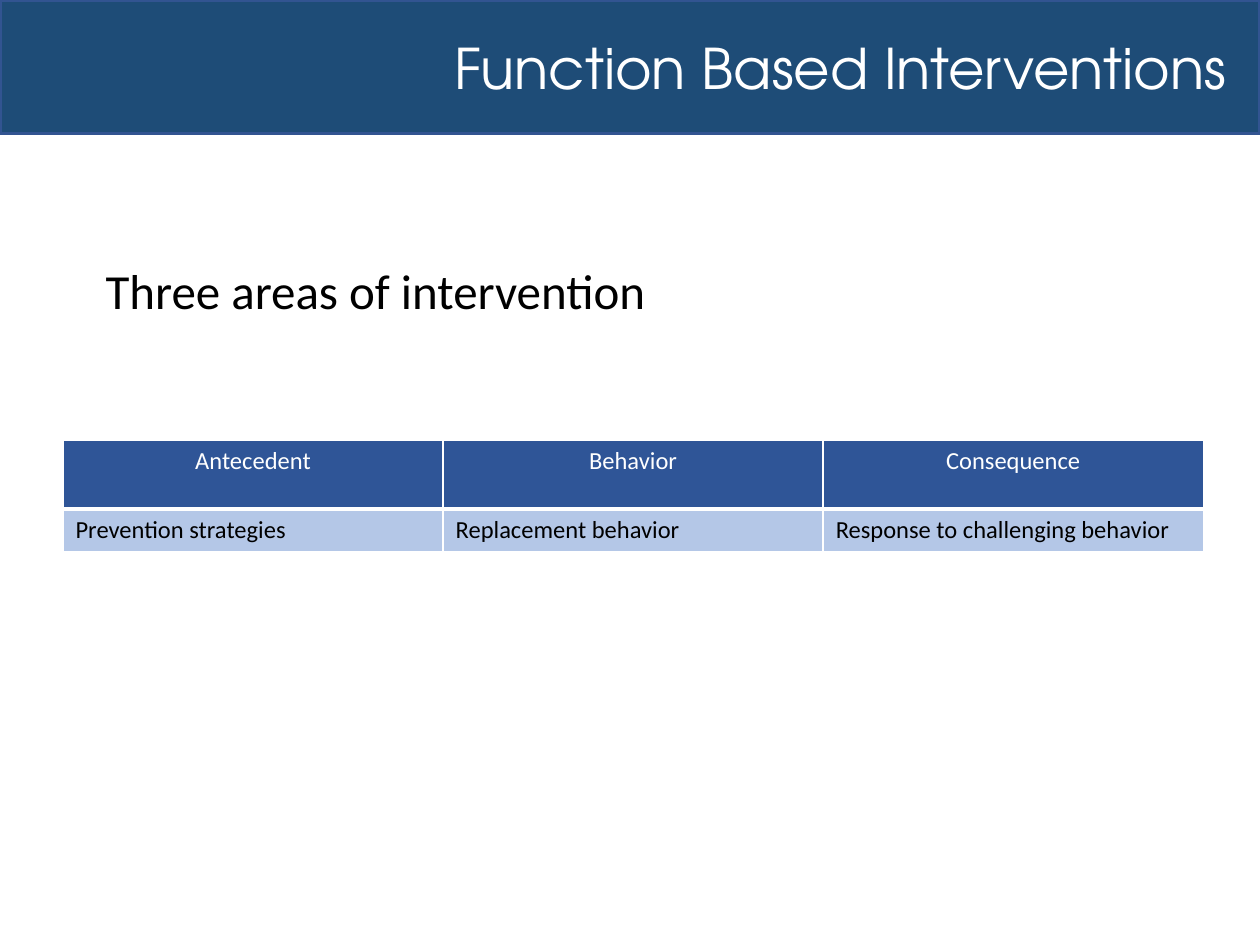
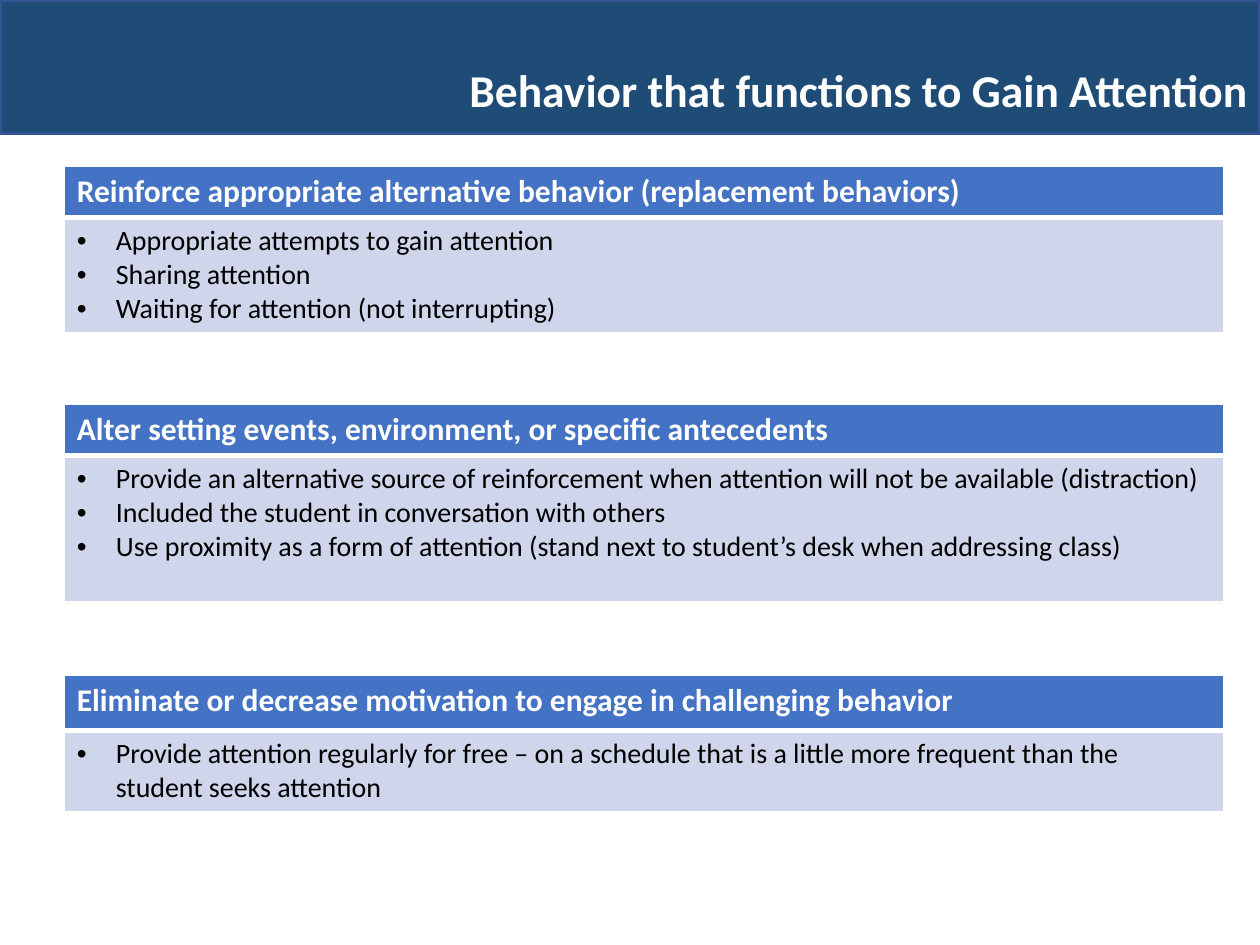
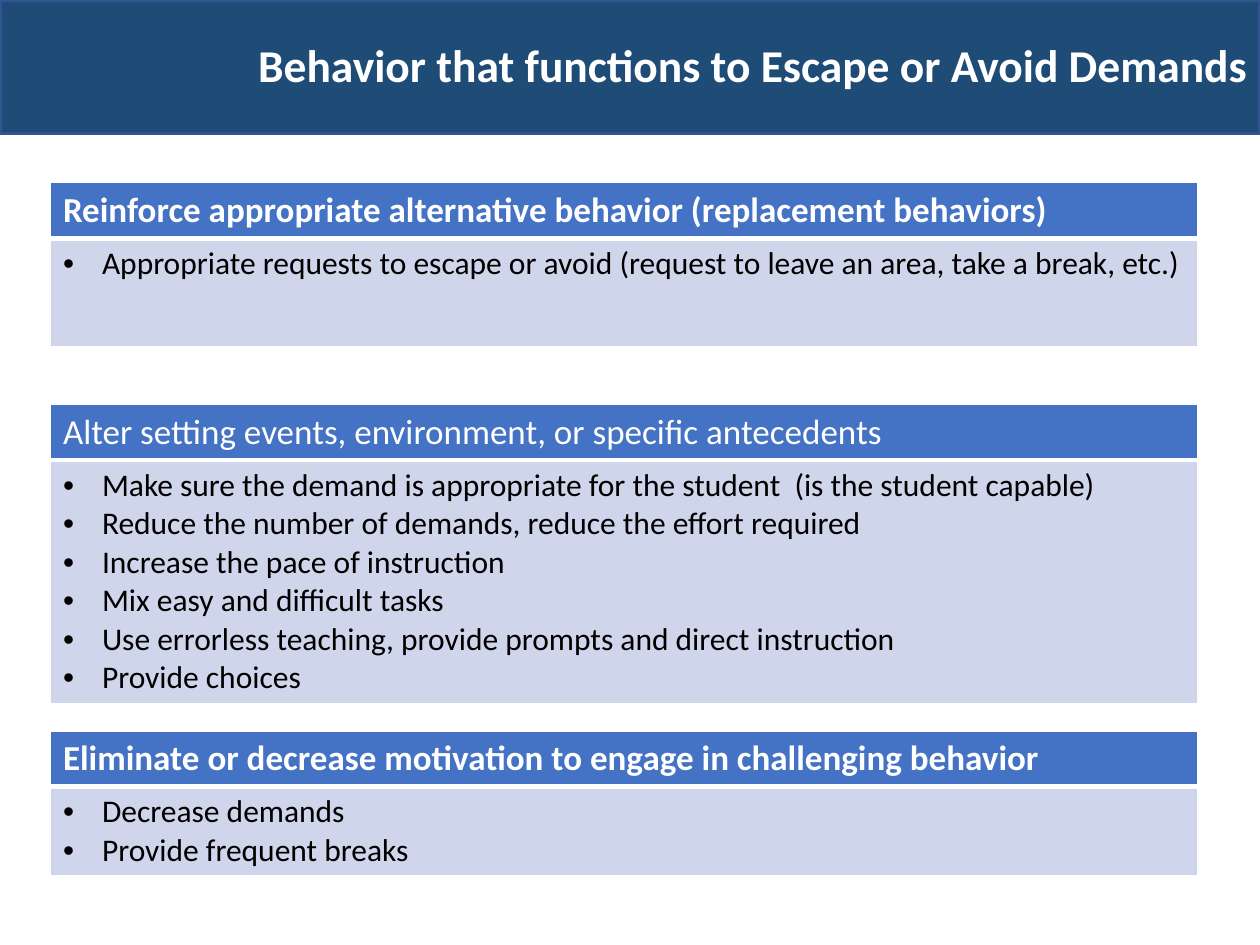
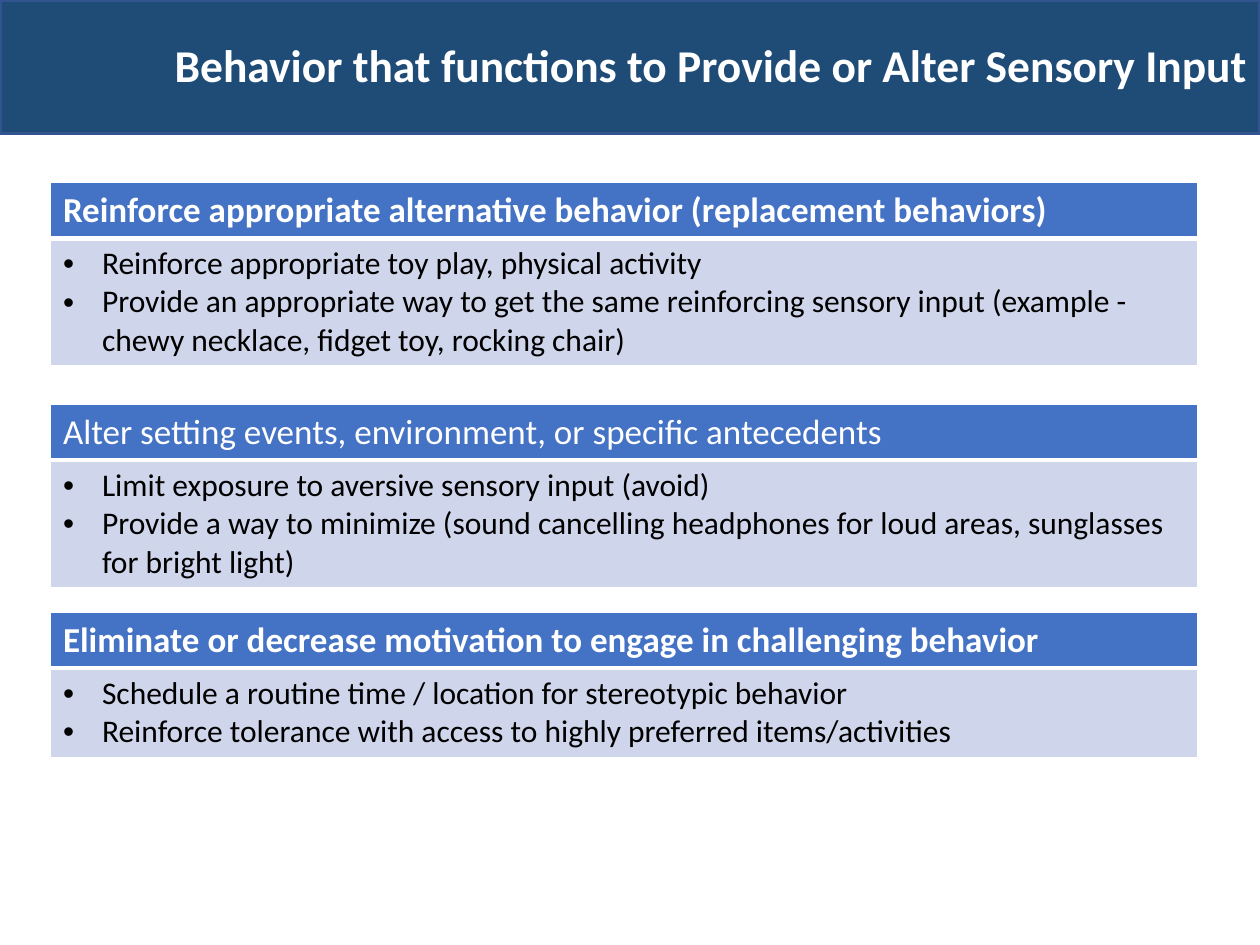
from lxml.etree import SubElement
from pptx import Presentation
from pptx.dml.color import RGBColor
from pptx.enum.shapes import MSO_SHAPE
from pptx.enum.text import MSO_ANCHOR, MSO_AUTO_SIZE, PP_ALIGN
from pptx.oxml.ns import qn
from pptx.util import Inches, Pt

COLORS = {
    "band": "1E4C77", "band_line": "325491", "white": "FFFFFF", "black": "000000",
    "area_head": "2F5597", "area_body": "B4C7E7",
    "strategy_head": "4472C4", "strategy_body": "CFD5EA",
}
BODY_FONT = "Calibri"
TITLE_FONT = "TeX Gyre Adventor"
TITLE_ONLY = 5
BULLET_INDENT = 0.31

INTRO_TITLE = "Function Based Interventions"
INTRO_TEXT = "Three areas of intervention"
AREAS = [
    ("Antecedent", "Prevention strategies"),
    ("Behavior", "Replacement behavior"),
    ("Consequence", "Response to challenging behavior"),
]

HEADINGS = [
    "Reinforce appropriate alternative behavior (replacement behaviors)",
    "Alter setting events, environment, or specific antecedents",
    "Eliminate or decrease motivation to engage in challenging behavior",
]

# Tables follow HEADINGS: (top, header height, body height, bullets)
FUNCTIONS = [
    {
        "title": "Behavior that functions to Gain Attention",
        "title_bottom_inset": 0.05, "left": 0.51, "width": 9.2,
        "head_size": 18, "body_size": 16, "bold": (True, True, True),
        "tables": [
            (1.32, 0.4, 0.91, [
                "Appropriate attempts to gain attention",
                "Sharing attention",
                "Waiting for attention (not interrupting)",
            ]),
            (3.21, 0.4, 1.16, [
                "Provide an alternative source of reinforcement when attention "
                "will not be available (distraction)",
                "Included the student in conversation with others",
                "Use proximity as a form of attention (stand next to student’s "
                "desk when addressing class)",
            ]),
            (5.36, 0.44, 0.63, [
                "Provide attention regularly for free – on a schedule that is a "
                "little more frequent than the student seeks attention",
            ]),
        ],
    },
    {
        "title": "Behavior that functions to Escape or Avoid Demands",
        "title_bottom_inset": 0.45, "left": 0.4, "width": 9.11,
        "head_size": 20, "body_size": 18, "bold": (True, False, True),
        "tables": [
            (1.45, 0.44, 0.86, [
                "Appropriate requests to escape or avoid (request to leave an "
                "area, take a break, etc.)",
            ]),
            (3.21, 0.44, 1.89, [
                "Make sure the demand is appropriate for the student  (is the "
                "student capable)",
                "Reduce the number of demands, reduce the effort required",
                "Increase the pace of instruction",
                "Mix easy and difficult tasks",
                "Use errorless teaching, provide prompts and direct instruction",
                "Provide choices",
            ]),
            (5.8, 0.44, 0.7, ["Decrease demands", "Provide frequent breaks"]),
        ],
    },
    {
        "title": "Behavior that functions to Provide or Alter Sensory Input",
        "title_bottom_inset": 0.45, "left": 0.4, "width": 9.11,
        "head_size": 20, "body_size": 18, "bold": (True, False, True),
        "tables": [
            (1.45, 0.44, 1, [
                "Reinforce appropriate toy play, physical activity",
                "Provide an appropriate way to get the same reinforcing sensory "
                "input (example - chewy necklace, fidget toy, rocking chair)",
            ]),
            (3.21, 0.44, 1, [
                "Limit exposure to aversive sensory input (avoid)",
                "Provide a way to minimize (sound cancelling headphones for loud "
                "areas, sunglasses for bright light)",
            ]),
            (4.86, 0.44, 0.7, [
                "Schedule a routine time / location for stereotypic behavior",
                "Reinforce tolerance with access to highly preferred items/activities",
            ]),
        ],
    },
]


def rgb(name):
    return RGBColor.from_string(COLORS[name])


def box(*lengths):
    return [Inches(n) for n in lengths]


def add_run(p, text, size, color, bold=False, font=BODY_FONT):
    r = p.add_run()
    r.text = text
    r.font.size, r.font.bold, r.font.name = Pt(size), bold, font
    r.font.color.rgb = rgb(color)


def add_bullet(p):
    pPr = p._p.get_or_add_pPr()
    pPr.set("marL", str(Inches(BULLET_INDENT)))
    pPr.set("indent", str(-Inches(BULLET_INDENT)))
    color = SubElement(pPr, qn("a:buClr"))
    SubElement(color, qn("a:srgbClr"), val=COLORS["black"])
    SubElement(pPr, qn("a:buFont"), typeface="Arial")
    SubElement(pPr, qn("a:buChar"), char="•")


def style_cell(cell, fill, bottom=1):
    """Give a cell white borders, then its fill."""
    tcPr = cell._tc.get_or_add_tcPr()
    for side, width in (("L", 1), ("R", 1), ("T", 1), ("B", bottom)):
        ln = SubElement(tcPr, qn(f"a:ln{side}"), w=str(Pt(width)))
        solid = SubElement(ln, qn("a:solidFill"))
        SubElement(solid, qn("a:srgbClr"), val=COLORS["white"])
    cell.fill.solid()
    cell.fill.fore_color.rgb = rgb(fill)


def add_grid(slide, cols, left, top, width, heights, kind):
    """Add a table of one header row and one body row."""
    frame = slide.shapes.add_table(2, cols, *box(left, top, width, sum(heights)))
    table = frame.table
    table.horz_banding = False
    for row, height in zip(table.rows, heights):
        row.height = Inches(height)
    for col in range(cols):
        style_cell(table.cell(0, col), f"{kind}_head", bottom=3)
        style_cell(table.cell(1, col), f"{kind}_body")
    return table


def add_slide(prs, title, place, size, bold=False, font=BODY_FONT, bottom_inset=0.05):
    """Add a slide with the top band and a right-aligned title over it."""
    slide = prs.slides.add_slide(prs.slide_layouts[TITLE_ONLY])
    band = slide.shapes.add_shape(MSO_SHAPE.RECTANGLE, *box(0, 0, 10, 1.06))
    band.shadow.inherit = False
    band.fill.solid()
    band.fill.fore_color.rgb = rgb("band")
    band.line.color.rgb = rgb("band_line")
    band.line.width = Pt(2)

    sp = slide.shapes.title
    band._element.addnext(sp._element)
    sp.left, sp.top, sp.width, sp.height = box(*place)
    tf = sp.text_frame
    tf.auto_size = MSO_AUTO_SIZE.NONE
    tf.word_wrap = True
    tf.vertical_anchor = MSO_ANCHOR.MIDDLE
    tf.margin_bottom = Inches(bottom_inset)
    p = tf.paragraphs[0]
    p.alignment = PP_ALIGN.RIGHT
    p.line_spacing = 0.9
    add_run(p, title, size, "white", bold, font)
    return slide


def add_intro_slide(prs):
    slide = add_slide(prs, INTRO_TITLE, (0.19, 0.08, 9.65, 0.98), 32, font=TITLE_FONT)
    table = add_grid(slide, len(AREAS), 0.5, 3.49, 9.05, (0.55, 0.33), "area")
    for col, (area, strategy) in enumerate(AREAS):
        p = table.cell(0, col).text_frame.paragraphs[0]
        p.alignment = PP_ALIGN.CENTER
        add_run(p, area, 14, "white")
        add_run(table.cell(1, col).text_frame.paragraphs[0], strategy, 14, "black")

    tf = slide.shapes.add_textbox(*box(0.74, 2.02, 8.33, 0.57)).text_frame
    tf.word_wrap = True
    tf.auto_size = MSO_AUTO_SIZE.SHAPE_TO_FIT_TEXT
    add_run(tf.paragraphs[0], INTRO_TEXT, 28, "black")


def add_function_slide(prs, data):
    slide = add_slide(prs, data["title"], (0.01, 0.25, 10, 0.98), 26, bold=True,
                      bottom_inset=data["title_bottom_inset"])
    for heading, bold, (top, head, body, bullets) in zip(
            HEADINGS, data["bold"], data["tables"]):
        table = add_grid(slide, 1, data["left"], top, data["width"],
                         (head, body), "strategy")
        add_run(table.cell(0, 0).text_frame.paragraphs[0], heading,
                data["head_size"], "white", bold)
        tf = table.cell(1, 0).text_frame
        for i, text in enumerate(bullets):
            p = tf.add_paragraph() if i else tf.paragraphs[0]
            add_bullet(p)
            add_run(p, text, data["body_size"], "black")


def main():
    prs = Presentation()
    prs.slide_width, prs.slide_height = box(10, 7.5)
    add_intro_slide(prs)
    for data in FUNCTIONS:
        add_function_slide(prs, data)
    prs.save("out.pptx")


if __name__ == "__main__":
    main()
